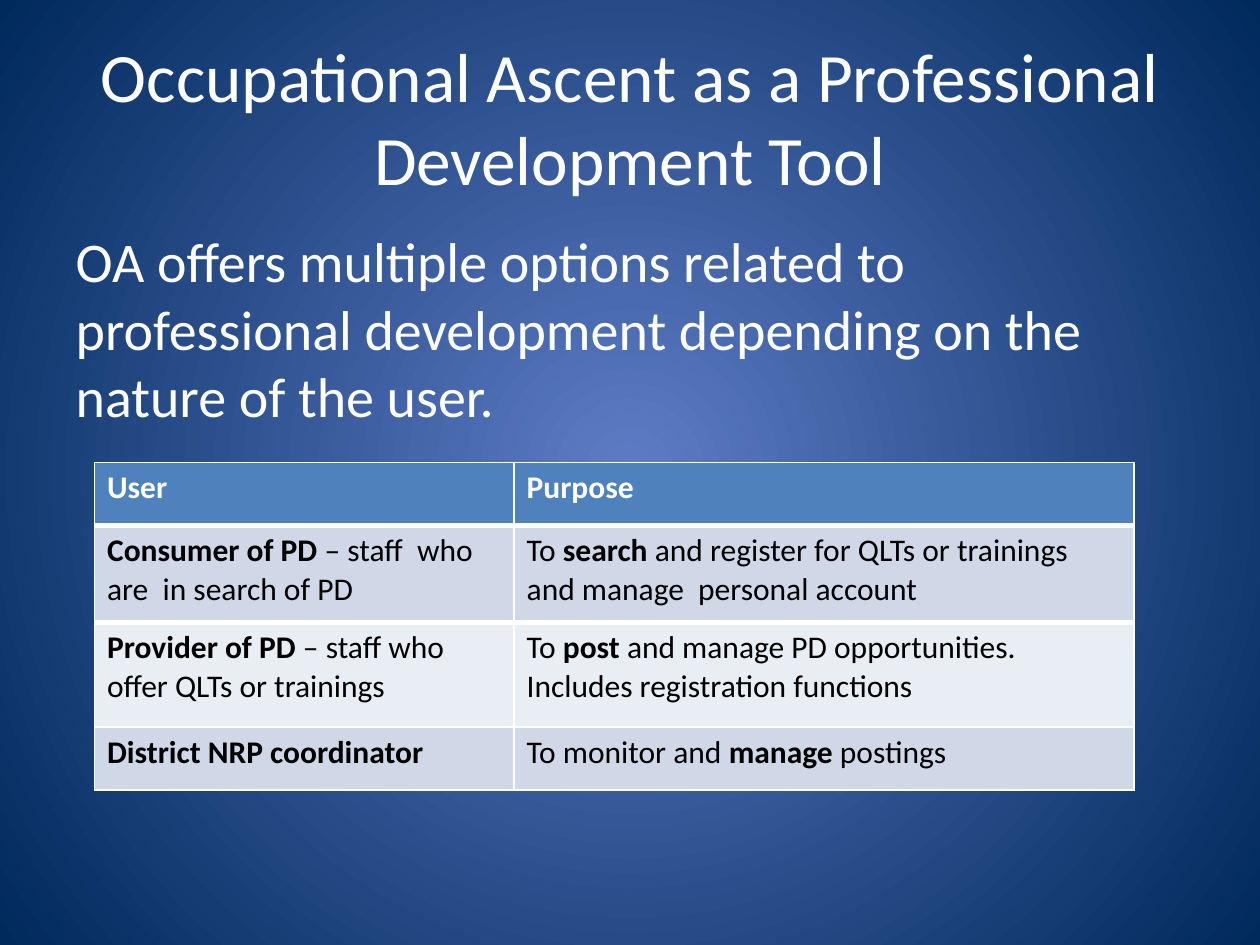
from lxml import etree
from pptx import Presentation
from pptx import util as u
from pptx.dml.color import RGBColor
from pptx.enum import text
from pptx.oxml.ns import qn

WHITE, BLACK = "FFFFFF", "000000"
HEADER_FILL, BAND_FILLS = "4F81BD", ("D0D8E8", "E9EDF4")
ROWS = [
    ("**User**", "**Purpose**"),
    ("**Consumer of PD **– staff  who are  in search of PD",
     "To **search **and register for QLTs or trainings and manage  personal account"),
    ("**Provider of PD **– staff who offer QLTs or trainings",
     "To **post **and manage PD opportunities. Includes registration functions"),
    ("**District NRP coordinator**", "To monitor and **manage **postings"),
]


def color(value):
    """Turn a hex string into a colour."""
    return RGBColor.from_string(value)


def apply(target, formats):
    """Set each named attribute on the target."""
    for name, value in formats.items():
        setattr(target, name, value)


def add_runs(paragraph, marked, size, ink):
    """Write text whose bold parts stand between double asterisks."""
    for index, part in enumerate(marked.split("**")):
        if part:
            run = paragraph.add_run()
            run.text = part
            apply(run.font, {"name": "Calibri", "size": u.Pt(size), "bold": index % 2 == 1})
            run.font.color.rgb = color(ink)


def paint_background(slide, center, edge):
    """Fill the background with a circular gradient."""
    fill = slide.background.fill
    fill.gradient()
    for stop, value, position in zip(fill.gradient_stops, (center, edge), (0, 1)):
        stop.color.rgb = color(value)
        stop.position = position
    gradient = next(slide.element.iter(qn("a:gradFill")))
    gradient.remove(gradient.find(qn("a:lin")))
    circle = etree.SubElement(gradient, qn("a:path"), path="circle")
    etree.SubElement(circle, qn("a:fillToRect"), dict.fromkeys("ltrb", "50000"))


def fill_placeholder(shape, box, words, size, anchor, alignment):
    """Place a placeholder in its box and write one paragraph."""
    apply(shape, dict(zip(("left", "top", "width", "height"), map(u.Inches, box))))
    apply(shape.text_frame, {"word_wrap": True, "auto_size": text.MSO_AUTO_SIZE.NONE,
                             "vertical_anchor": anchor})
    paragraph = shape.text_frame.paragraphs[0]
    paragraph.alignment = alignment
    add_runs(paragraph, words, size, WHITE)
    return paragraph


def remove_bullet(paragraph):
    """Drop the bullet and its indent."""
    properties = paragraph._p.get_or_add_pPr()
    for name in ("marL", "indent"):
        properties.set(name, "0")
    etree.SubElement(properties, qn("a:buNone"))


def add_border(cell, side, width):
    """Draw a white line along one side of a cell."""
    line = etree.Element(qn(f"a:ln{side}"), w=str(u.Pt(width)))
    fill = etree.SubElement(line, qn("a:solidFill"))
    etree.SubElement(fill, qn("a:srgbClr"), val=WHITE)
    cell._tc.get_or_add_tcPr().insert(0, line)


def add_user_table(slide, box, widths, heights):
    """Add the table of users and purposes."""
    table = slide.shapes.add_table(len(ROWS), len(widths), *map(u.Inches, box)).table
    for column, width in zip(table.columns, widths):
        column.width = u.Inches(width)
    for index, (row, height, entries) in enumerate(zip(table.rows, heights, ROWS)):
        row.height = u.Inches(height)
        fill = BAND_FILLS[(index - 1) % 2] if index else HEADER_FILL
        for cell, entry in zip(row.cells, entries):
            cell.fill.solid()
            cell.fill.fore_color.rgb = color(fill)
            add_runs(cell.text_frame.paragraphs[0], entry, 18, BLACK if index else WHITE)
            if index < 2:
                add_border(cell, "T" if index else "B", 3)


def main():
    """Build and save the slide."""
    presentation = Presentation()
    apply(presentation, {"slide_width": u.Inches(10), "slide_height": u.Inches(7.5)})
    slide = presentation.slides.add_slide(presentation.slide_layouts[1])
    paint_background(slide, "5E7CC5", "00295C")
    title, body = slide.placeholders
    fill_placeholder(title, (0.5, 0.3, 9, 1.25),
                     "Occupational Ascent as a Professional Development Tool",
                     39.6, text.MSO_ANCHOR.MIDDLE, text.PP_ALIGN.CENTER)
    remove_bullet(fill_placeholder(
        body, (0.5, 1.75, 9, 4.95),
        "OA offers multiple options related to professional development "
        "depending on the nature of the user.",
        32, text.MSO_ANCHOR.TOP, text.PP_ALIGN.LEFT))
    add_user_table(slide, (0.75, 3.67, 8.25, 2.6), (3.33, 4.92), (0.5, 0.77, 0.83, 0.5))
    presentation.save("out.pptx")


if __name__ == "__main__":
    main()
